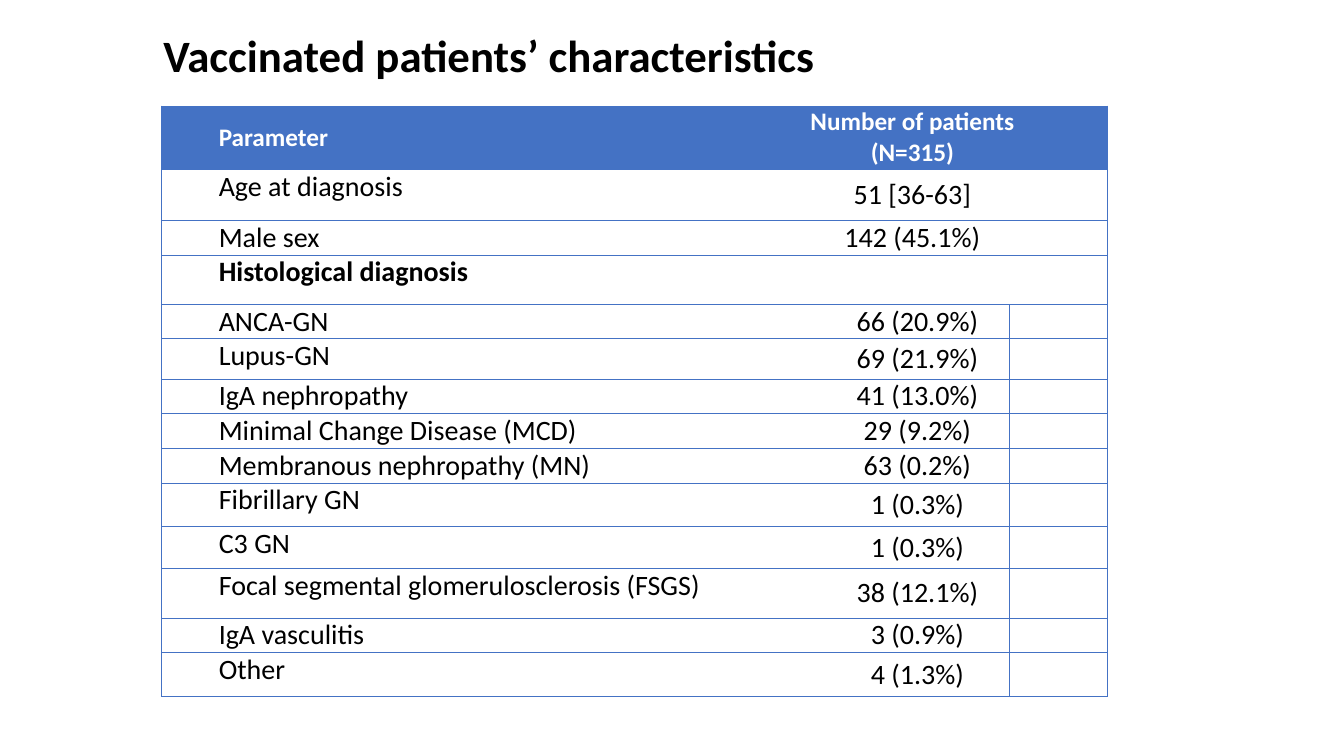
"""Build a slide with a table of vaccinated patients' characteristics."""
from lxml import etree
from pptx import Presentation
from pptx import util as u
from pptx.dml.color import RGBColor
from pptx.enum import text
from pptx.oxml import ns

COLORS = {"accent": "4472C4", "header": "FFFFFF", "body": "000000"}
COLUMNS = [5.02, 1.07, 2.32, 0.97]
LAST = len(COLUMNS) - 1
SECTION = 3
ROWS = [
    ("Parameter", "Number of patients\n(N=315)", 0.63),
    ("Age at diagnosis", "51 [36-63]", 0.51),
    ("Male sex", "142 (45.1%)", 0.33),
    ("Histological diagnosis", "", 0.49),
    ("ANCA-GN", "66 (20.9%)", 0.33),
    ("Lupus-GN", "69 (21.9%)", 0.4),
    ("IgA nephropathy", "41 (13.0%)", 0.33),
    ("Minimal Change Disease (MCD)", "29 (9.2%)", 0.35),
    ("Membranous nephropathy (ΜN)", "63 (0.2%)", 0.33),
    ("Fibrillary GN", "1 (0.3%)", 0.43),
    ("C3 GN", "1 (0.3%)", 0.42),
    ("Focal segmental glomerulosclerosis (FSGS)", "38 (12.1%)", 0.49),
    ("IgA vasculitis", "3 (0.9%)", 0.33),
    ("Other", "4 (1.3%)", 0.44),
]


def set_borders(cell, visible):
    """Draw the named sides of a cell and clear the others."""
    properties = cell._tc.get_or_add_tcPr()
    for side in "LRTB":
        line = etree.SubElement(properties, ns.qn(f"a:ln{side}"), w=str(u.Pt(0.5)))
        if side in visible:
            fill = etree.SubElement(line, ns.qn("a:solidFill"))
            etree.SubElement(fill, ns.qn("a:srgbClr"), val=COLORS["accent"])
        else:
            etree.SubElement(line, ns.qn("a:noFill"))


def write(frame, words, size, color, bold, align, indent=0):
    """Fill a text frame and format each of its paragraphs."""
    frame.text = words
    for para in frame.paragraphs:
        para.alignment = align
        para._p.get_or_add_pPr().set("marL", str(u.Inches(indent)))
        para._p.get_or_add_pPr().set("indent", "0")
        for span in para.runs:
            span.font.color.rgb = RGBColor.from_string(COLORS[color])
            for name, value in {"name": "Calibri", "size": u.Pt(size), "bold": bold}.items():
                setattr(span.font, name, value)


deck = Presentation()
deck.slide_width, deck.slide_height = u.Inches(13.33), u.Inches(7.5)
page = deck.slides.add_slide(deck.slide_layouts[5])

title = page.shapes.title
for name, value in {"left": 1.52, "top": 0.1, "width": 9.11, "height": 0.95}.items():
    setattr(title, name, u.Inches(value))
title.text_frame.vertical_anchor = text.MSO_ANCHOR.MIDDLE
write(title.text_frame, "Vaccinated patients’ characteristics", 32, "body", True, text.PP_ALIGN.LEFT)
title.text_frame.paragraphs[0].line_spacing = 0.9

height = sum(row[2] for row in ROWS)
table = page.shapes.add_table(
    len(ROWS), len(COLUMNS), u.Inches(1.6), u.Inches(1.05), u.Inches(sum(COLUMNS)), u.Inches(height)
).table
table.horz_banding = False
for column, width in zip(table.columns, COLUMNS):
    column.width = u.Inches(width)

for index, (label, figure, height) in enumerate(ROWS):
    table.rows[index].height = u.Inches(height)
    header, section, detail = index == 0, index == SECTION, index > SECTION
    for position in range(len(COLUMNS)):
        cell = table.cell(index, position)
        for name, value in {"left": 0.07, "right": 0.07, "top": 0, "bottom": 0}.items():
            setattr(cell, f"margin_{name}", u.Inches(value))
        left = position == 0 or (detail and position == LAST)
        right = position == LAST or (detail and position == 2) or (section and position == 0)
        right = right or (index < SECTION and position == 1)
        set_borders(cell, "TB" + "L" * left + "R" * right)
        if header:
            cell.fill.solid()
            cell.fill.fore_color.rgb = RGBColor.from_string(COLORS["accent"])
        else:
            cell.fill.background()

    first, last = (0, LAST) if section else (0, 1) if detail else (1, LAST)
    table.cell(index, first).merge(table.cell(index, last))
    size, color = (18, "header") if header else (20, "body")
    name_cell = table.cell(index, 0)
    name_cell.vertical_anchor = text.MSO_ANCHOR.MIDDLE if header else text.MSO_ANCHOR.TOP
    write(name_cell.text_frame, label, size, color, header or section, text.PP_ALIGN.LEFT, 0.5)
    if figure:
        figure_cell = table.cell(index, 2 if detail else 1)
        figure_cell.vertical_anchor = text.MSO_ANCHOR.MIDDLE
        write(figure_cell.text_frame, figure, size, color, header, text.PP_ALIGN.CENTER, 0.5)

deck.save("out.pptx")
